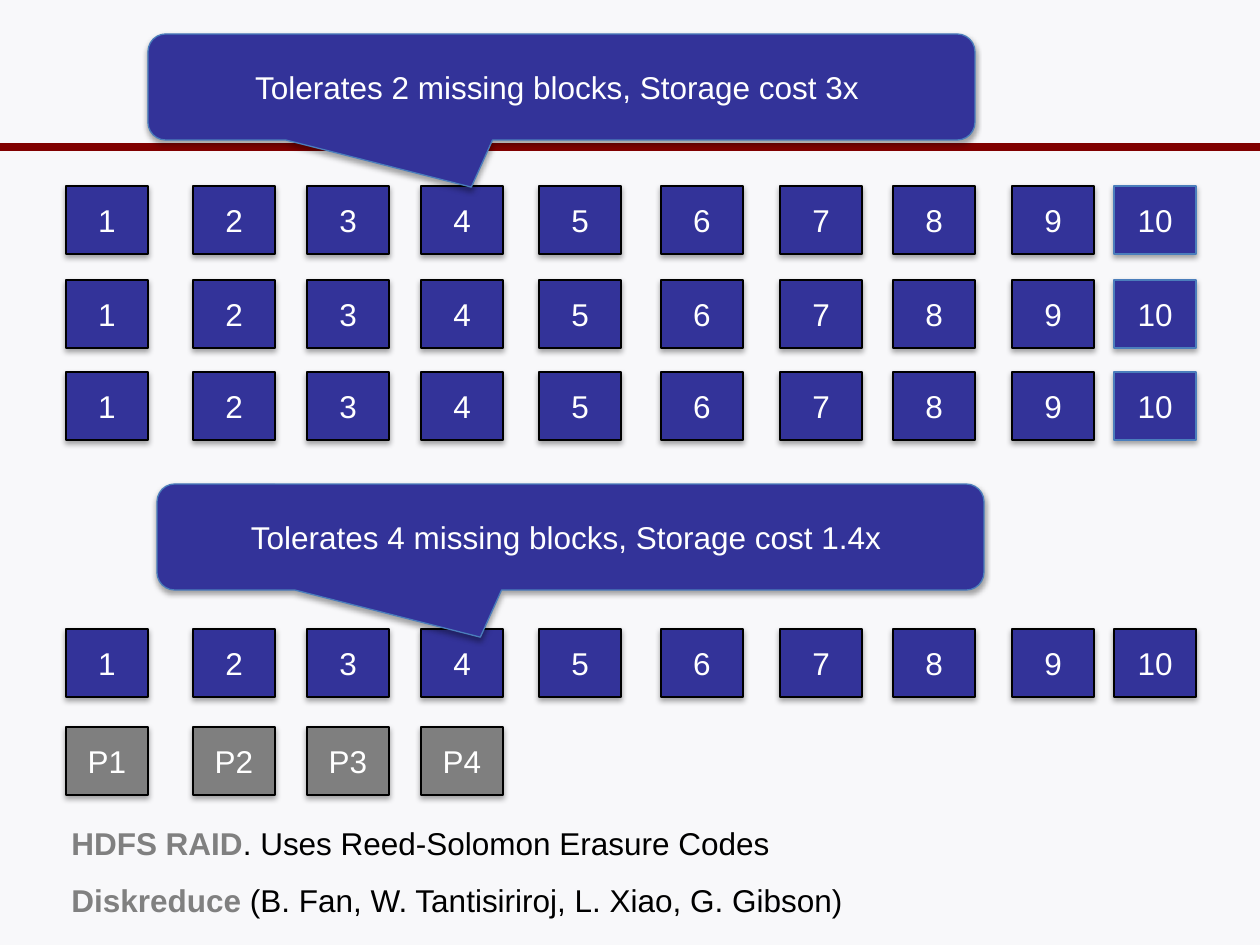
import lxml.etree
import pptx
import pptx.dml.color
import pptx.enum.shapes
import pptx.enum.text
import pptx.oxml.ns
import pptx.util

RGBColor = pptx.dml.color.RGBColor
PAPER = RGBColor(0xF8, 0xF8, 0xFA)
MAROON = RGBColor(0x80, 0x00, 0x00)
INDIGO = RGBColor(0x33, 0x33, 0x99)
PARITY_GRAY = RGBColor(0x7F, 0x7F, 0x7F)
NAME_GRAY = RGBColor(0x80, 0x80, 0x80)
EDGE_BLUE = RGBColor(0x4B, 0x7E, 0xBC)
BLACK = RGBColor(0, 0, 0)
WHITE = RGBColor(0xFF, 0xFF, 0xFF)

DATA_BLOCKS = [str(number) for number in range(1, 11)]
PARITY_BLOCKS = ["P1", "P2", "P3", "P4"]
COLUMN_LEFTS = [66, 193, 307, 421, 539, 661, 780, 893, 1012, 1114]
BLOCK_SIZE = (82, 68)
CALLOUT_SIZE = (827, 106)
CALLOUT_SHAPE = [-0.109, 0.945, 0.167]
RULE_TOP = 147

SCHEMES = [
    {
        "rows": [(top, DATA_BLOCKS, INDIGO, EDGE_BLUE) for top in (186, 280, 372)],
        "callout": (148, 34, "Tolerates 2 missing blocks, Storage cost 3x "),
        "grouped": False,
    },
    {
        "rows": [
            (629, DATA_BLOCKS, INDIGO, BLACK),
            (727, PARITY_BLOCKS, PARITY_GRAY, BLACK),
        ],
        "callout": (157, 484, "Tolerates 4 missing blocks, Storage cost 1.4x "),
        "grouped": True,
    },
]
NOTES = [
    (818, 731, "HDFS RAID", ". Uses Reed-Solomon Erasure Codes"),
    (875, 804, "Diskreduce", " (B. Fan, W. Tantisiriroj, L. Xiao, G. Gibson)"),
]
NOTE_LEFT, NOTE_HEIGHT = 59, 50


def px(length):
    return round(length * 914400 / 126)


def add_span(para, text, color, bold=False):
    span = para.add_run()
    span.text = text
    span.font.name = "Arial"
    span.font.size = pptx.util.Pt(18)
    span.font.bold = bold
    span.font.color.rgb = color


def add_shadow(shape):
    shape.shadow.inherit = False
    qn = pptx.oxml.ns.qn
    effects = shape.element.spPr.find(qn("a:effectLst"))
    shadow = lxml.etree.SubElement(
        effects, qn("a:outerShdw"),
        blurRad="40000", dist="23000", dir="5400000", rotWithShape="0")
    color = lxml.etree.SubElement(shadow, qn("a:srgbClr"), val="000000")
    lxml.etree.SubElement(color, qn("a:alpha"), val="35000")


def add_box(shapes, kind, left, top, size, text, fill, edge):
    box = shapes.add_shape(kind, px(left), px(top), *map(px, size))
    box.fill.solid()
    box.fill.fore_color.rgb = fill
    box.line.color.rgb = edge
    box.line.width = pptx.util.Pt(0.75)
    add_shadow(box)
    box.text_frame.vertical_anchor = pptx.enum.text.MSO_ANCHOR.MIDDLE
    para = box.text_frame.paragraphs[0]
    para.alignment = pptx.enum.text.PP_ALIGN.CENTER
    add_span(para, text, WHITE)
    return box


def add_scheme(page, scheme):
    kinds = pptx.enum.shapes.MSO_SHAPE
    shapes = page.shapes.add_group_shape().shapes if scheme["grouped"] else page.shapes
    for top, labels, fill, last_edge in scheme["rows"]:
        for left, label in zip(COLUMN_LEFTS, labels):
            edge = last_edge if label == DATA_BLOCKS[-1] else BLACK
            add_box(shapes, kinds.RECTANGLE, left, top, BLOCK_SIZE, label, fill, edge)
    left, top, text = scheme["callout"]
    callout = add_box(shapes, kinds.ROUNDED_RECTANGULAR_CALLOUT,
                      left, top, CALLOUT_SIZE, text, INDIGO, EDGE_BLUE)
    for index, value in enumerate(CALLOUT_SHAPE):
        callout.adjustments[index] = value


def add_rule(page, width):
    rule = page.shapes.add_connector(
        pptx.enum.shapes.MSO_CONNECTOR.STRAIGHT, 0, px(RULE_TOP), width, px(RULE_TOP))
    rule.line.color.rgb = MAROON
    rule.line.width = pptx.util.Pt(4.5)
    lxml.etree.SubElement(rule.element.spPr, pptx.oxml.ns.qn("a:effectLst"))


def add_note(page, top, width, name, detail):
    box = page.shapes.add_textbox(px(NOTE_LEFT), px(top), px(width), px(NOTE_HEIGHT))
    box.text_frame.word_wrap = False
    box.text_frame.auto_size = pptx.enum.text.MSO_AUTO_SIZE.SHAPE_TO_FIT_TEXT
    para = box.text_frame.paragraphs[0]
    add_span(para, name, NAME_GRAY, bold=True)
    add_span(para, detail, BLACK)


def main():
    deck = pptx.Presentation()
    deck.slide_width, deck.slide_height = px(1260), px(945)
    page = deck.slides.add_slide(deck.slide_layouts[6])
    page.background.fill.solid()
    page.background.fill.fore_color.rgb = PAPER
    add_rule(page, deck.slide_width)
    for scheme in SCHEMES:
        add_scheme(page, scheme)
    for note in NOTES:
        add_note(page, *note)
    deck.save("out.pptx")


if __name__ == "__main__":
    main()
